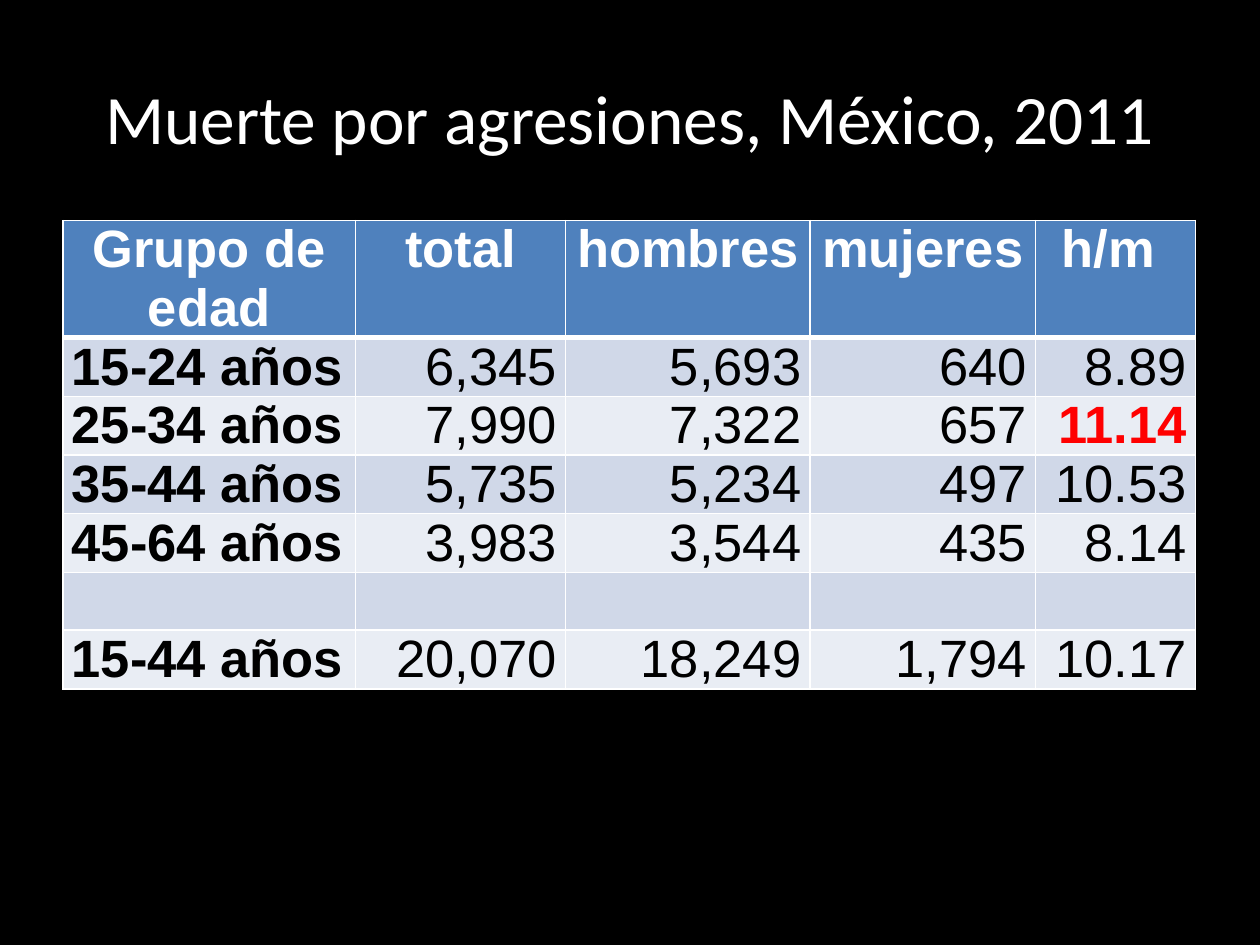
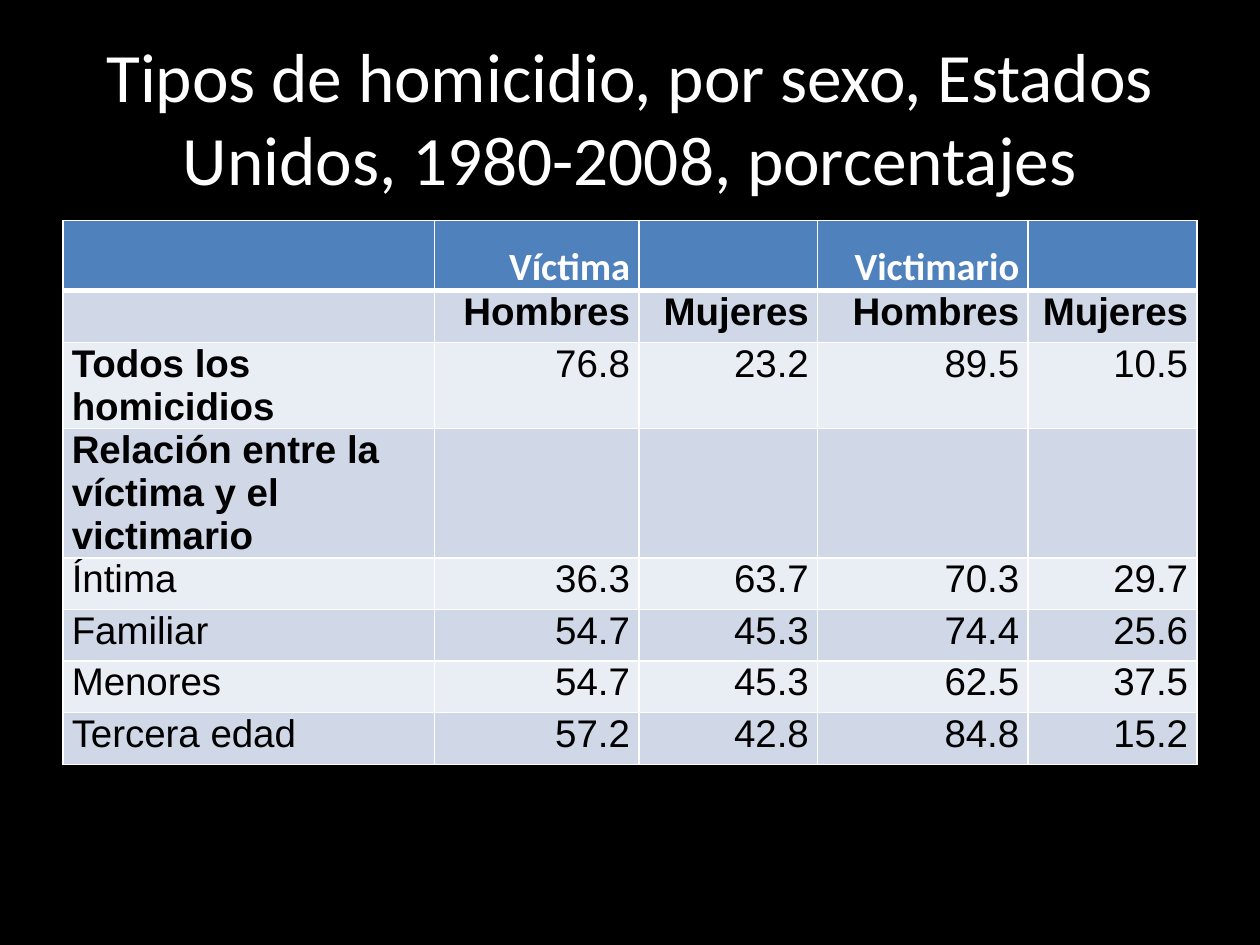
"""Build two slides with tables of homicide figures by age, sex and relation."""
from pptx import Presentation
from pptx.dml.color import RGBColor
from pptx.enum.text import MSO_ANCHOR as Anchor, MSO_AUTO_SIZE as Fit, PP_ALIGN as Align
from pptx.oxml import parse_xml
from pptx.oxml.ns import nsdecls
from pptx.util import Inches, Pt

WHITE, BLACK, RED = "FFFFFF", "000000", "FF0000"
BLUE, BANDS = "4F81BD", ("E9EDF4", "D0D8E8")


def style(font, name, size, color, bold=False):
    """Set face, size, colour and weight of a font."""
    font.name, font.size, font.bold = name, Pt(size), bold
    font.color.rgb = RGBColor.from_string(color)


def edge(cell, side, width):
    """Draw one white side of a cell."""
    cell._tc.get_or_add_tcPr().append(parse_xml(
        f'<a:ln{side} {nsdecls("a")} w="{Pt(width)}"><a:solidFill>'
        f'<a:srgbClr val="{WHITE}"/></a:solidFill></a:ln{side}>'))


pages = [
    dict(
        title="Muerte por agresiones, México, 2011",
        size=30, face="Arial", align=Align.CENTER, space=1,
        heads=1, strong=6, red="11.14",
        cols=[2.32, 1.67, 1.94, 1.79, 1.27],
        tall=[0.93] + [0.46] * 6,
        rows=[
            ["Grupo de edad", "total", "hombres", "mujeres", "h/m "],
            ["15-24 años", "6,345", "5,693", "640", "8.89"],
            ["25-34 años", "7,990", "7,322", "657", "11.14"],
            ["35-44 años", "5,735", "5,234", "497", "10.53"],
            ["45-64 años", "3,983", "3,544", "435", "8.14"],
            [""] * 5,
            ["15-44 años", "20,070", "18,249", "1,794", "10.17"],
        ]),
    dict(
        title="Tipos de homicidio, por sexo, Estados Unidos, 1980-2008, porcentajes",
        size=22, face="Calibri", align=Align.RIGHT, space=1.5,
        heads=2, strong=3, red=None,
        cols=[2.95, 1.62, 1.42, 1.67, 1.34],
        tall=[0.55, 0.41, 0.68, 1.02] + [0.41] * 4,
        rows=[
            ["", "Víctima", "", "Victimario", ""],
            ["", "Hombres", "Mujeres", "Hombres", "Mujeres"],
            ["Todos los homicidios", "76.8", "23.2", "89.5", "10.5"],
            ["Relación entre la víctima y el victimario"] + [""] * 4,
            ["Íntima", "36.3", "63.7", "70.3", "29.7"],
            ["Familiar", "54.7", "45.3", "74.4", "25.6"],
            ["Menores", "54.7", "45.3", "62.5", "37.5"],
            ["Tercera edad", "57.2", "42.8", "84.8", "15.2"],
        ]),
]

deck = Presentation()
deck.slide_width, deck.slide_height = Inches(10), Inches(7.5)
back = deck.slide_master.background.fill
back.solid()
back.fore_color.rgb = RGBColor.from_string(BLACK)

for page in pages:
    slide = deck.slides.add_slide(deck.slide_layouts[5])
    title = slide.shapes.title
    title.left, title.top = Inches(0.5), Inches(0.3)
    title.width, title.height = Inches(9), Inches(1.25)
    frame = title.text_frame
    frame.text = page["title"]
    frame.auto_size, frame.word_wrap = Fit.NONE, True
    frame.vertical_anchor = Anchor.MIDDLE
    frame.paragraphs[0].alignment = Align.CENTER
    style(frame.paragraphs[0].runs[0].font, "Calibri", 39.6, WHITE)

    rows, cols = page["rows"], page["cols"]
    table = slide.shapes.add_table(
        len(rows), len(cols), Inches(0.5), Inches(1.75),
        Inches(sum(cols)), Inches(sum(page["tall"]))).table
    for col, width in zip(table.columns, cols):
        col.width = Inches(width)
    for row, height in zip(table.rows, page["tall"]):
        row.height = Inches(height)

    for r, row in enumerate(rows):
        for c, text in enumerate(row):
            cell = table.cell(r, c)
            cell.margin_left = cell.margin_right = Inches(0.07)
            cell.margin_top = cell.margin_bottom = 0
            for side in "LRTB":
                thick = (r, side) in [(0, "B"), (1, "T")]
                edge(cell, side, 3 if thick else 1)
            cell.fill.solid()
            shade = BANDS[r % 2] if r else BLUE
            cell.fill.fore_color.rgb = RGBColor.from_string(shade)
            if not text:
                continue
            cell.text_frame.text = text
            para = cell.text_frame.paragraphs[0]
            para.alignment = Align.RIGHT if c else Align.LEFT
            face, color = "Arial", BLACK
            if r == 0:
                para.alignment, para.line_spacing = page["align"], page["space"]
                face, color = page["face"], WHITE
            hot = text == page["red"]
            label = c == 0 and r <= page["strong"]
            style(para.runs[0].font, face, page["size"], RED if hot else color,
                  hot or label or r < page["heads"])

deck.save("out.pptx")
